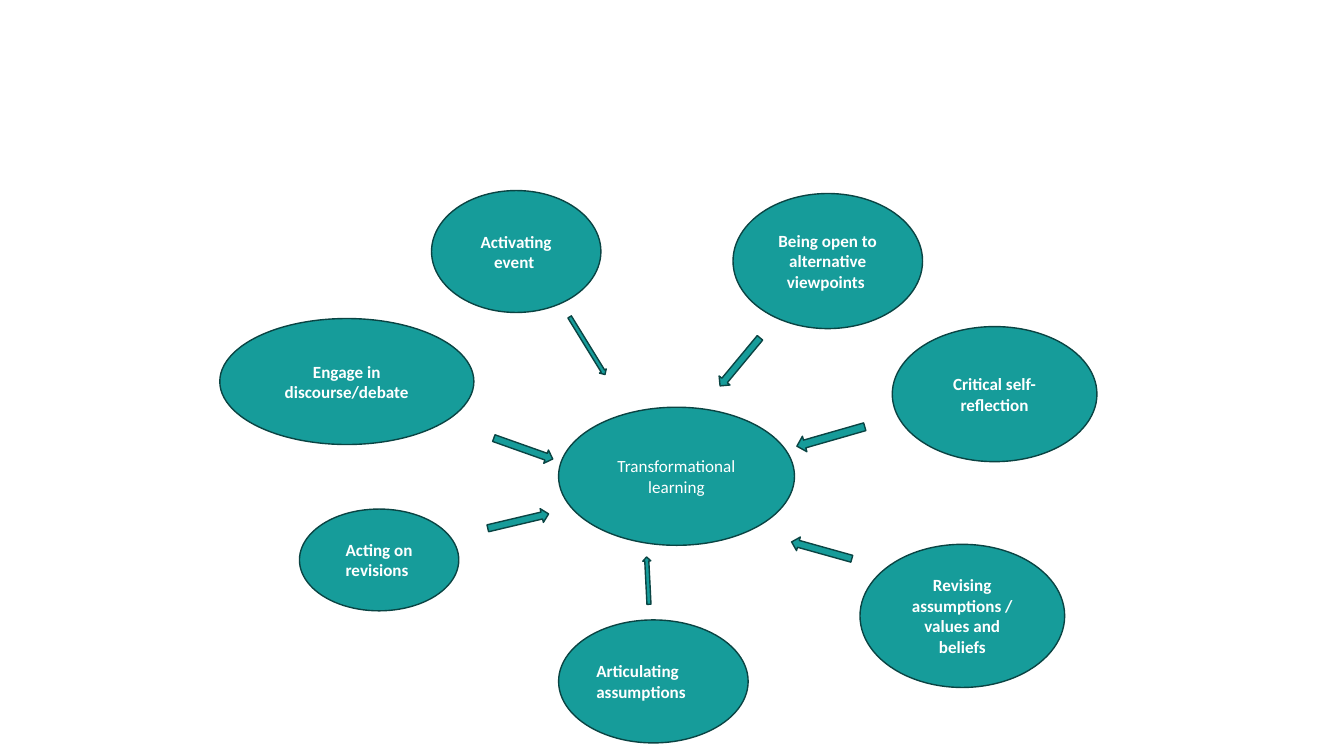
import pptx
import pptx.util
import pptx.dml.color
import pptx.enum.shapes
import pptx.enum.text

Inches, Pt = pptx.util.Inches, pptx.util.Pt
RGBColor = pptx.dml.color.RGBColor
MSO_SHAPE = pptx.enum.shapes.MSO_SHAPE
PP_ALIGN = pptx.enum.text.PP_ALIGN

TEAL = RGBColor(0x16, 0x9C, 0x9A)
DARK_TEAL = RGBColor(0x0A, 0x44, 0x43)
WHITE = RGBColor(0xFF, 0xFF, 0xFF)


def write_text(sp, text, font="Calibri", size=12.2, color=WHITE, bold=True,
               align=PP_ALIGN.CENTER):
    tf = sp.text_frame
    tf.word_wrap = True
    tf.vertical_anchor = pptx.enum.text.MSO_ANCHOR.MIDDLE
    p = tf.paragraphs[0]
    p.alignment = align
    p.space_after = Pt(6)
    r = p.add_run()
    r.text = text
    r.font.name = font
    r.font.size = Pt(size)
    r.font.bold = bold
    r.font.color.rgb = color


class Diagram:
    """Holds the current slide and the style its shapes share."""

    def __init__(self, slide, fill, outline, line_width):
        self.s = slide
        self.fill = fill
        self.outline = outline
        self.line_width = line_width

    def shape(self, kind, box):
        sp = self.s.shapes.add_shape(kind, *map(Inches, box))
        sp.shadow.inherit = False
        sp.fill.solid()
        sp.fill.fore_color.rgb = self.fill
        sp.line.color.rgb = self.outline
        sp.line.width = Pt(self.line_width)
        return sp

    def bubble(self, text, box, **text_format):
        write_text(self.shape(MSO_SHAPE.OVAL, box), text, **text_format)

    def arrow(self, box, angle):
        self.shape(MSO_SHAPE.RIGHT_ARROW, box).rotation = angle


# Outer bubbles: text, (left, top, width, height), text format
STEPS = [
    ("Being open to alternative viewpoints ", (7.27, 1.92, 1.88, 1.34), {}),
    ("Critical self-reflection", (8.85, 3.24, 2.03, 1.34), {}),
    ("Articulating assumptions", (5.54, 6.15, 1.88, 1.22),
     {"align": PP_ALIGN.LEFT}),
    ("Acting on revisions ", (2.97, 5.05, 1.58, 1.01), {}),
    ("Engage in discourse/debate", (2.18, 3.16, 2.52, 1.25), {}),
    ("Activating event ", (4.28, 1.89, 1.68, 1.21), {}),
    ("Revising assumptions / values and beliefs", (8.53, 5.4, 2.03, 1.42), {}),
]

# Arrows towards the centre: (left, top, width, height), rotation
ARROWS = [
    ((4.88, 4.38, 0.62, 0.14), 19.5),
    ((7.03, 3.52, 0.62, 0.14), 129.7),
    ((7.89, 4.25, 0.7, 0.16), 164),
    ((4.83, 5.1, 0.62, 0.14), 346.7),
    ((5.49, 3.39, 0.67, 0.08), 58.4),
    ((7.84, 5.39, 0.62, 0.14), 195.6),
    ((6.19, 5.72, 0.47, 0.08), 267.1),
]


def main():
    prs = pptx.Presentation()
    prs.slide_width = Inches(13.33)
    prs.slide_height = Inches(7.5)
    s = prs.slides.add_slide(prs.slide_layouts[6])
    diagram = Diagram(s, TEAL, DARK_TEAL, 1)

    # Central idea
    diagram.bubble("Transformational learning", (5.54, 4.04, 2.34, 1.37),
                   bold=False)

    # Steps around it
    for text, box, text_format in STEPS:
        diagram.bubble(text, box, **text_format)

    # Arrows pointing inwards
    for box, angle in ARROWS:
        diagram.arrow(box, angle)

    prs.save("out.pptx")


if __name__ == "__main__":
    main()
